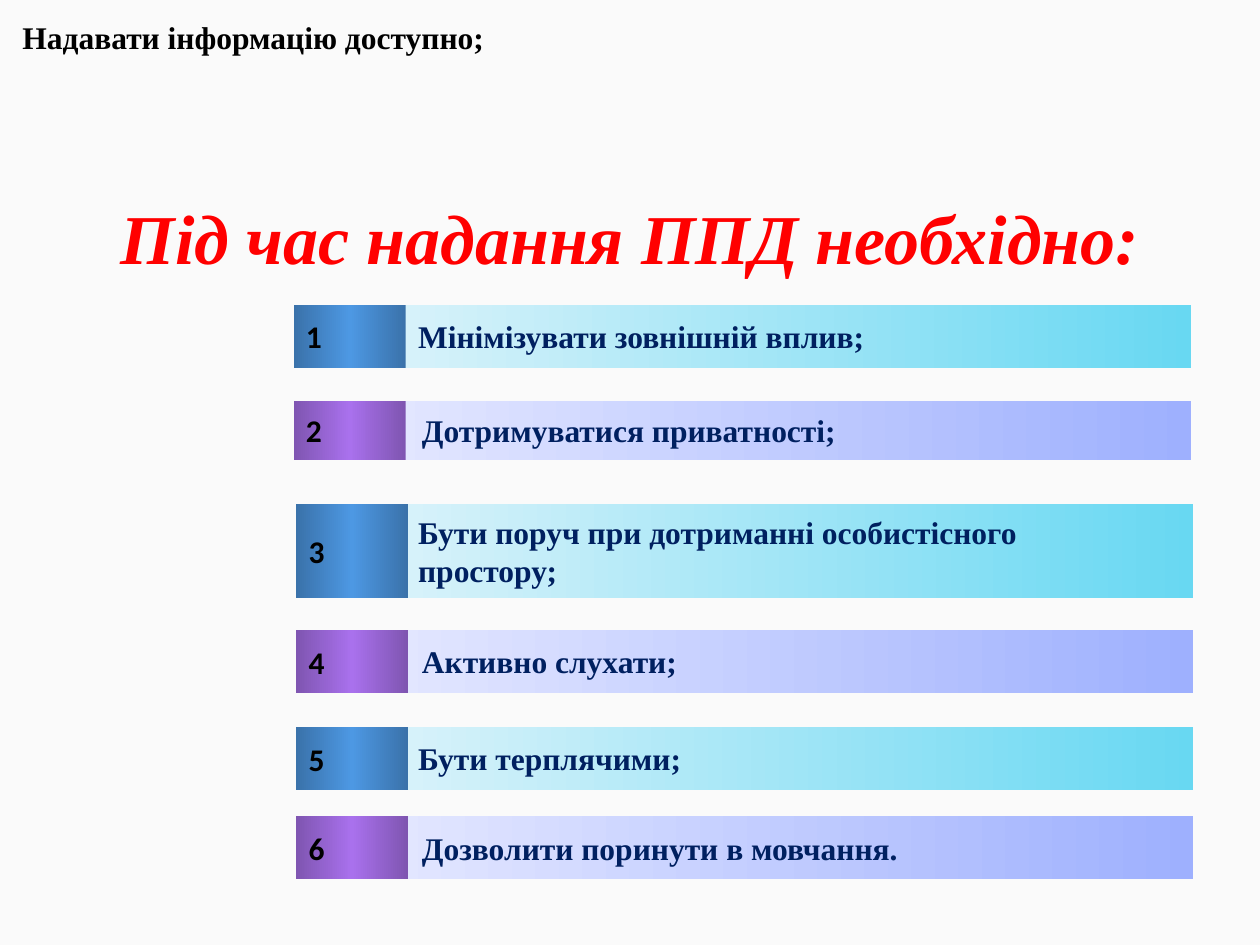
import dataclasses

import lxml.etree
import pptx
import pptx.dml.color
import pptx.enum.shapes
import pptx.enum.text
import pptx.oxml.ns
import pptx.util

WIDE = pptx.util.Inches(10)
HIGH = pptx.util.Inches(7.5)
COLS, ROWS = 100, 75
SERIF = "Times New Roman"
SANS = "Calibri"
NAVY = "002060"
BLACK = "000000"
LINE_H = 4
BADGE_W, BAR_X, BAR_W = 8.9, 7.8, 63.4
ANCHOR = pptx.enum.text.MSO_ANCHOR
SIZING = pptx.enum.text.MSO_AUTO_SIZE


@dataclasses.dataclass
class Theme:
    bar: tuple[str, ...]
    badge: tuple[str, ...]
    text_x: float


@dataclasses.dataclass
class Step:
    text: str
    left: float
    top: float
    high: float = 5
    text_h: float = LINE_H


BLUE = Theme(("D8F2FA", "68D8F2"), ("3A72AA", "4D98E3", "3A72AA"), 32.2)
PLUM = Theme(("E2E6FF", "9EB0FE"), ("7F55B1", "A971ED", "7F55B1"), 32.5)

STEPS = [
    Step("Мінімізувати зовнішній вплив;", 23.3, 24.2),
    Step("Дотримуватися приватності;", 23.3, 31.8, 4.7),
    Step("Бути поруч при дотриманні особистісного простору;", 23.5, 40, 7.5, 7.1),
    Step("Активно слухати;", 23.5, 50),
    Step("Бути терплячими;", 23.5, 57.7),
    Step("Дозволити поринути в мовчання.", 23.5, 64.8),
]


def color(code: str) -> pptx.dml.color.RGBColor:
    return pptx.dml.color.RGBColor.from_string(code)


def place(x: float, y: float, w: float, h: float) -> tuple[int, ...]:
    return (int(WIDE * x / COLS), int(HIGH * y / ROWS),
            int(WIDE * w / COLS), int(HIGH * h / ROWS))


def style(frame, text: str, size: int, face: str, code: str) -> None:
    frame.text = text
    font = frame.paragraphs[0].runs[0].font
    font.size = pptx.util.Pt(size)
    font.name = face
    font.bold = True
    font.color.rgb = color(code)


def blend(shape, codes: tuple[str, ...]) -> None:
    qn = pptx.oxml.ns.qn
    shape.fill.gradient()
    shape.fill.gradient_angle = 0
    stops = shape._element.spPr.find(qn("a:gradFill")).find(qn("a:gsLst"))
    for stop in list(stops):
        stops.remove(stop)
    for i, code in enumerate(codes):
        part = 100000 * i // (len(codes) - 1)
        stop = lxml.etree.SubElement(stops, qn("a:gs"), pos=str(part))
        lxml.etree.SubElement(stop, qn("a:srgbClr"), val=code)


def add_rect(group, spot: tuple[int, ...], codes: tuple[str, ...]):
    kind = pptx.enum.shapes.MSO_SHAPE.RECTANGLE
    shape = group.shapes.add_shape(kind, *spot)
    shape.shadow.inherit = False
    shape.line.fill.background()
    blend(shape, codes)
    return shape


def add_text(slide, spot: tuple[int, ...], text: str, code: str) -> None:
    frame = slide.shapes.add_textbox(*spot).text_frame
    frame.word_wrap = True
    frame.auto_size = SIZING.SHAPE_TO_FIT_TEXT
    style(frame, text, 18, SERIF, code)


def add_step(slide, num: int, step: Step) -> None:
    theme = BLUE if num % 2 else PLUM
    group = slide.shapes.add_group_shape()
    add_rect(group, place(step.left + BAR_X, step.top, BAR_W, step.high), theme.bar)
    badge = add_rect(group, place(step.left, step.top, BADGE_W, step.high), theme.badge)
    frame = badge.text_frame
    frame.word_wrap = False
    frame.vertical_anchor = ANCHOR.MIDDLE
    style(frame, str(num), 18, SANS, BLACK)
    frame.paragraphs[0].alignment = pptx.enum.text.PP_ALIGN.LEFT
    text_y = step.top + (step.high - step.text_h) / 2
    add_text(slide, place(theme.text_x, text_y, 60.9, step.text_h), step.text, NAVY)


def add_title(slide, text: str) -> None:
    title = slide.shapes.title
    title.left, title.top, title.width, title.height = place(0, 14.3, COLS, 9.8)
    frame = title.text_frame
    frame.auto_size = SIZING.NONE
    frame.vertical_anchor = ANCHOR.MIDDLE
    style(frame, text, 40, SERIF, "FF0000")
    line = frame.paragraphs[0]
    line.alignment = pptx.enum.text.PP_ALIGN.CENTER
    line.line_spacing = 0.9
    line.runs[0].font.italic = True


def main() -> None:
    deck = pptx.Presentation()
    deck.slide_width, deck.slide_height = WIDE, HIGH
    slide = deck.slides.add_slide(deck.slide_layouts[5])
    back = slide.background.fill
    back.solid()
    back.fore_color.rgb = color("FAFAFA")
    add_title(slide, "Під час надання ППД необхідно:")
    add_text(slide, place(0.8, 0.9, 60.9, LINE_H), "Надавати інформацію доступно;", BLACK)
    for num, step in enumerate(STEPS, 1):
        add_step(slide, num, step)
    deck.save("out.pptx")


if __name__ == "__main__":
    main()
